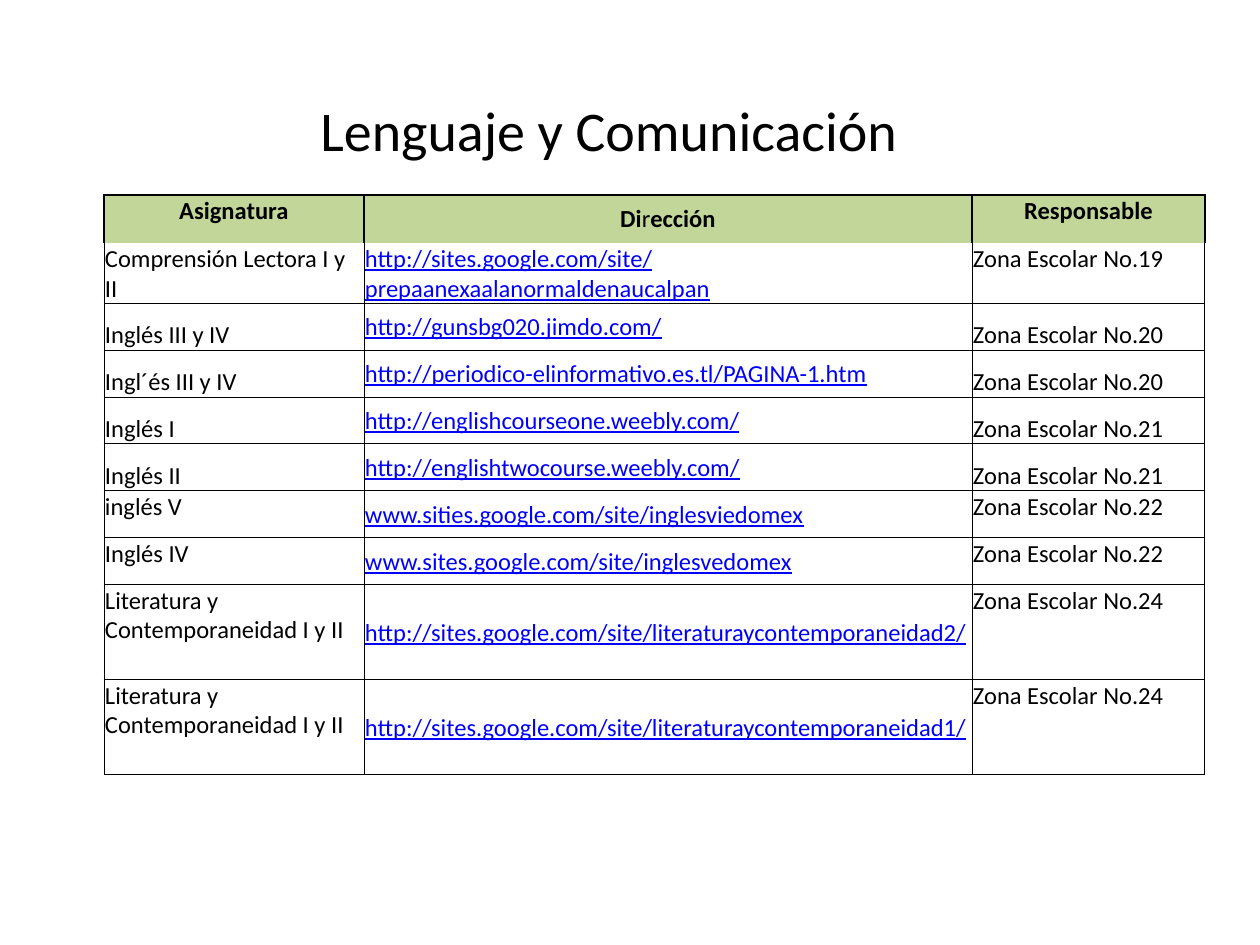
from dataclasses import dataclass

from lxml.etree import SubElement as Sub
from pptx import Presentation
from pptx.dml.color import RGBColor as RGB
from pptx.enum.text import MSO_ANCHOR as Anchor, PP_ALIGN as Align
from pptx.oxml.ns import qn
from pptx.util import Pt

PX = 914400 // 126


@dataclass(frozen=True)
class Theme:
    font: str = "Calibri"
    ink: str = "000000"
    link: str = "0000FF"
    head: str = "C2D69A"
    title: int = 32
    body: int = 14
    thin: float = 0.5
    thick: float = 1


THEME = Theme()
COLS = (260, 608, 233)
HEAD = ("Asignatura", (("Di", True), ("r", False), ("ección", True)), "Responsable")
TOP, MID, LOW = Anchor.TOP, Anchor.MIDDLE, Anchor.BOTTOM

# Height, anchor of the outer cells, subject, address, zone number
ROWS = (
    (60, TOP, "Comprensión Lectora I y II",
     "http://sites.google.com/site/prepaanexaalanormaldenaucalpan", 19),
    (47, LOW, "Inglés III y IV", "http://gunsbg020.jimdo.com/", 20),
    (47, LOW, "Ingl´és III y IV",
     "http://periodico-elinformativo.es.tl/PAGINA-1.htm", 20),
    (47, LOW, "Inglés I", "http://englishcourseone.weebly.com/", 21),
    (47, LOW, "Inglés II", "http://englishtwocourse.weebly.com/", 21),
    (47, TOP, "inglés V", "www.sities.google.com/site/inglesviedomex", 22),
    (47, TOP, "Inglés IV", "www.sites.google.com/site/inglesvedomex", 22),
    (95, TOP, "Literatura y Contemporaneidad I y II",
     "http://sites.google.com/site/literaturaycontemporaneidad2/", 24),
    (95, TOP, "Literatura y Contemporaneidad I y II",
     "http://sites.google.com/site/literaturaycontemporaneidad1/", 24),
)
HEAD_H = 48


def write(frame, text, size=THEME.body, color=THEME.ink, bold=False,
          line=False, align=Align.LEFT):
    """Text is a string, or pairs of string and bold flag."""
    para = frame.paragraphs[0]
    para.alignment = align
    for part, heavy in ((text, bold),) if isinstance(text, str) else text:
        run = para.add_run()
        run.text = part
        font = run.font
        font.name, font.size = THEME.font, Pt(size)
        font.bold, font.underline = heavy, line
        font.color.rgb = RGB.from_string(color)


def border(cell, width, skip=""):
    props = cell._tc.get_or_add_tcPr()
    for side in "LRTB":
        edge = Sub(props, qn("a:ln" + side), w=str(Pt(width)))
        if side == skip:
            Sub(edge, qn("a:noFill"))
        else:
            fill = Sub(edge, qn("a:solidFill"))
            Sub(fill, qn("a:srgbClr"), val=THEME.ink)


def style(cell, anchor, width, skip="", fill=None):
    cell.margin_left = cell.margin_right = cell.margin_top = PX
    cell.margin_bottom = 0
    cell.vertical_anchor = anchor
    border(cell, width, skip)
    if fill:
        cell.fill.solid()
        cell.fill.fore_color.rgb = RGB.from_string(fill)
    else:
        cell.fill.background()


def title(slide, x, y, w, h):
    frame = slide.shapes.add_textbox(x * PX, y * PX, w * PX, h * PX).text_frame
    frame.word_wrap = True
    frame.vertical_anchor = MID
    write(frame, "Lenguaje y Comunicación ", size=THEME.title, align=Align.CENTER)


def sites(slide, x, y):
    high = (HEAD_H, *(row[0] for row in ROWS))
    table = slide.shapes.add_table(len(high), len(COLS), x * PX, y * PX,
                                   sum(COLS) * PX, sum(high) * PX).table
    table.first_row = table.horz_banding = False
    for col, w in zip(table.columns, COLS):
        col.width = w * PX
    for row, h in zip(table.rows, high):
        row.height = h * PX

    # Header
    for c, text in enumerate(HEAD):
        cell = table.cell(0, c)
        style(cell, MID if c == 1 else TOP, THEME.thick, "B", THEME.head)
        write(cell.text_frame, text, bold=True, align=Align.CENTER)

    # Body: the address column is linked blue and centred in height
    for r, (_, anchor, name, url, zone) in enumerate(ROWS, 1):
        for c, text in enumerate((name, url, f"Zona Escolar No.{zone}")):
            cell, web = table.cell(r, c), c == 1
            style(cell, MID if web else anchor, THEME.thin, "T" if r == 1 else "")
            write(cell.text_frame, text, line=web,
                  color=THEME.link if web else THEME.ink)


def main():
    deck = Presentation()
    deck.slide_width, deck.slide_height = 1260 * PX, 945 * PX
    slide = deck.slides.add_slide(deck.slide_layouts[6])
    title(slide, 184, 86, 863, 87)
    sites(slide, 104, 195)
    deck.save("out.pptx")


if __name__ == "__main__":
    main()
